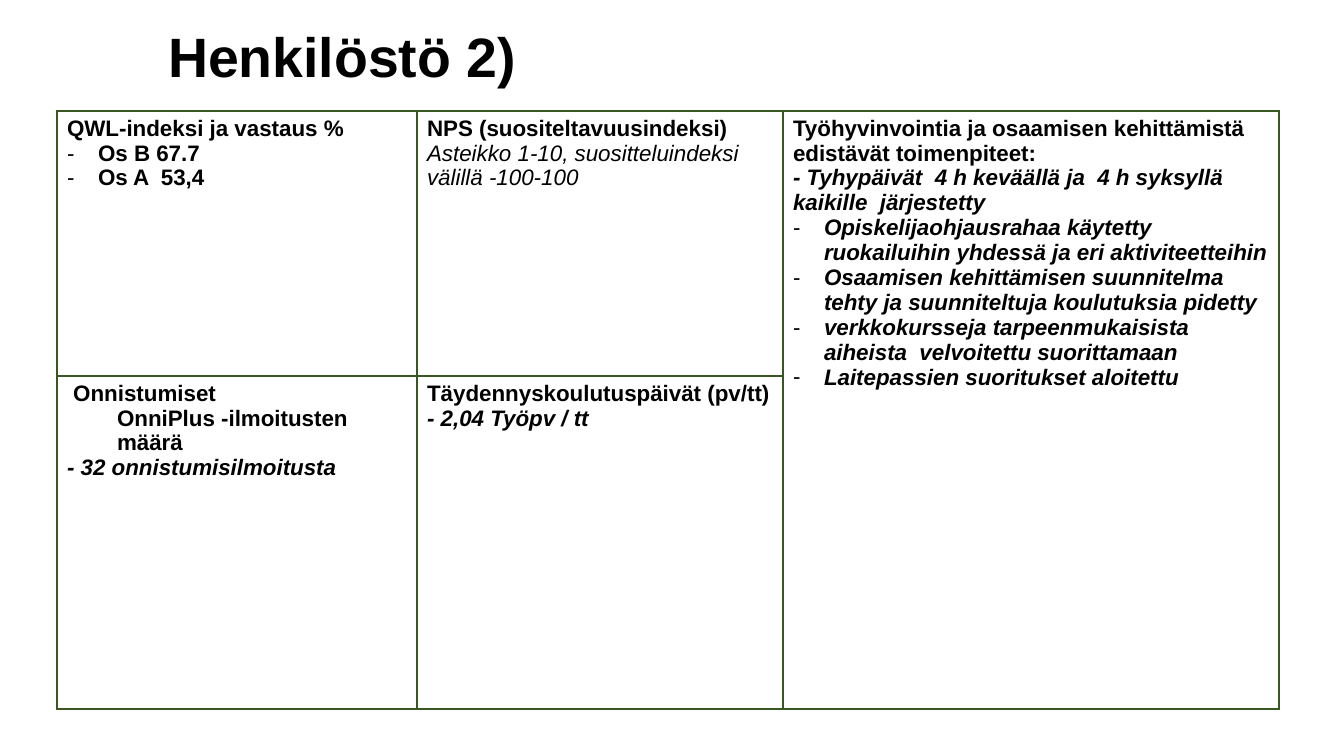
"""Build the staff slide: a title above a bordered table of wellbeing measures."""
from dataclasses import dataclass

from lxml import etree
from pptx import Presentation, util as u
from pptx.dml.color import RGBColor
from pptx.enum import text
from pptx.oxml import ns

SCALE = 914400 / 100.8
FONT = "Arial"
COLORS = {"text": "000000", "border": "385723", "cell": "FFFFFF"}
COLUMNS = (360, 366, 496)
ROWS = (265, 333)
TITLE_BOX = {"left": 158, "top": 27, "width": 935, "height": 66}
TABLE_LEFT, TABLE_TOP = 57, 111
BULLET_INDENT = 31


@dataclass(frozen=True)
class Para:
    content: str
    bold: bool = True
    italic: bool = False
    bullet: bool = False
    indent: int = 0


@dataclass(frozen=True)
class Cell:
    row: int
    col: int
    paras: tuple[Para, ...]
    row_span: int = 1


CELLS = (
    Cell(0, 0, (
        Para("QWL-indeksi ja vastaus %"),
        Para("Os B 67.7", bullet=True),
        Para("Os A  53,4", bullet=True),
    )),
    Cell(0, 1, (
        Para("NPS (suositeltavuusindeksi)"),
        Para("Asteikko 1-10, suositteluindeksi välillä -100-100", bold=False, italic=True),
    )),
    Cell(0, 2, (
        Para("Työhyvinvointia ja osaamisen kehittämistä edistävät toimenpiteet:"),
        Para("- Tyhypäivät  4 h keväällä ja  4 h syksyllä  kaikille  järjestetty", italic=True),
        Para("Opiskelijaohjausrahaa käytetty ruokailuihin yhdessä ja eri aktiviteetteihin",
             italic=True, bullet=True),
        Para("Osaamisen kehittämisen suunnitelma tehty ja suunniteltuja koulutuksia pidetty",
             italic=True, bullet=True),
        Para("verkkokursseja tarpeenmukaisista aiheista  velvoitettu suorittamaan",
             italic=True, bullet=True),
        Para("Laitepassien suoritukset aloitettu", italic=True, bullet=True),
    ), row_span=2),
    Cell(1, 0, (
        Para(" Onnistumiset"),
        Para("OnniPlus -ilmoitusten määrä", indent=50),
        Para("- 32 onnistumisilmoitusta", italic=True),
    )),
    Cell(1, 1, (
        Para("Täydennyskoulutuspäivät (pv/tt)"),
        Para("- 2,04 Työpv / tt", italic=True),
    )),
)


def px(n: int) -> u.Emu:
    return u.Emu(round(n * SCALE))


def apply(obj, values: dict) -> None:
    for name, value in values.items():
        setattr(obj, name, value)


def add_run(p, content: str, size: float, bold: bool = True, italic: bool = False) -> None:
    r = p.add_run()
    r.text = content
    apply(r.font, {"name": FONT, "size": u.Pt(size), "bold": bold, "italic": italic})
    r.font.color.rgb = RGBColor.from_string(COLORS["text"])


def set_indent(p, para: Para) -> None:
    pPr = p._p.get_or_add_pPr()
    if para.bullet:
        pPr.set("marL", str(px(BULLET_INDENT)))
        pPr.set("indent", str(-px(BULLET_INDENT)))
        etree.SubElement(pPr, ns.qn("a:buFont")).set("typeface", FONT)
        etree.SubElement(pPr, ns.qn("a:buChar")).set("char", "-")
    elif para.indent:
        pPr.set("marL", str(px(para.indent)))


def style_cell(cell) -> None:
    tcPr = cell._tc.get_or_add_tcPr()
    for side in ("lnL", "lnR", "lnT", "lnB"):
        ln = etree.SubElement(tcPr, ns.qn(f"a:{side}"), w=str(u.Pt(1)))
        fill = etree.SubElement(ln, ns.qn("a:solidFill"))
        etree.SubElement(fill, ns.qn("a:srgbClr"), val=COLORS["border"])
    cell.fill.solid()
    cell.fill.fore_color.rgb = RGBColor.from_string(COLORS["cell"])


def add_title(s) -> None:
    sp = s.shapes.title
    apply(sp, {name: px(n) for name, n in TITLE_BOX.items()})
    tf = sp.text_frame
    apply(tf, {"word_wrap": True, "auto_size": text.MSO_AUTO_SIZE.NONE,
               "vertical_anchor": text.MSO_ANCHOR.MIDDLE})
    p = tf.paragraphs[0]
    apply(p, {"alignment": text.PP_ALIGN.LEFT, "line_spacing": 0.9})
    add_run(p, "Henkilöstö 2)", 39.6)


def add_measures(s) -> None:
    frame = s.shapes.add_table(len(ROWS), len(COLUMNS), px(TABLE_LEFT), px(TABLE_TOP),
                               px(sum(COLUMNS)), px(sum(ROWS)))
    table = frame.table
    apply(table, {"first_row": False, "horz_banding": False})
    for column, width in zip(table.columns, COLUMNS):
        column.width = px(width)
    for row, height in zip(table.rows, ROWS):
        row.height = px(height)
    for cell in table.iter_cells():
        style_cell(cell)
    for spec in CELLS:
        cell = table.cell(spec.row, spec.col)
        if spec.row_span > 1:
            cell.merge(table.cell(spec.row + spec.row_span - 1, spec.col))
        tf = cell.text_frame
        for i, para in enumerate(spec.paras):
            p = tf.add_paragraph() if i else tf.paragraphs[0]
            set_indent(p, para)
            add_run(p, para.content, 16, para.bold, para.italic)


def main() -> None:
    prs = Presentation()
    apply(prs, {"slide_width": px(1344), "slide_height": px(756)})
    s = prs.slides.add_slide(prs.slide_layouts[5])
    add_title(s)
    add_measures(s)
    prs.save("out.pptx")


if __name__ == "__main__":
    main()
